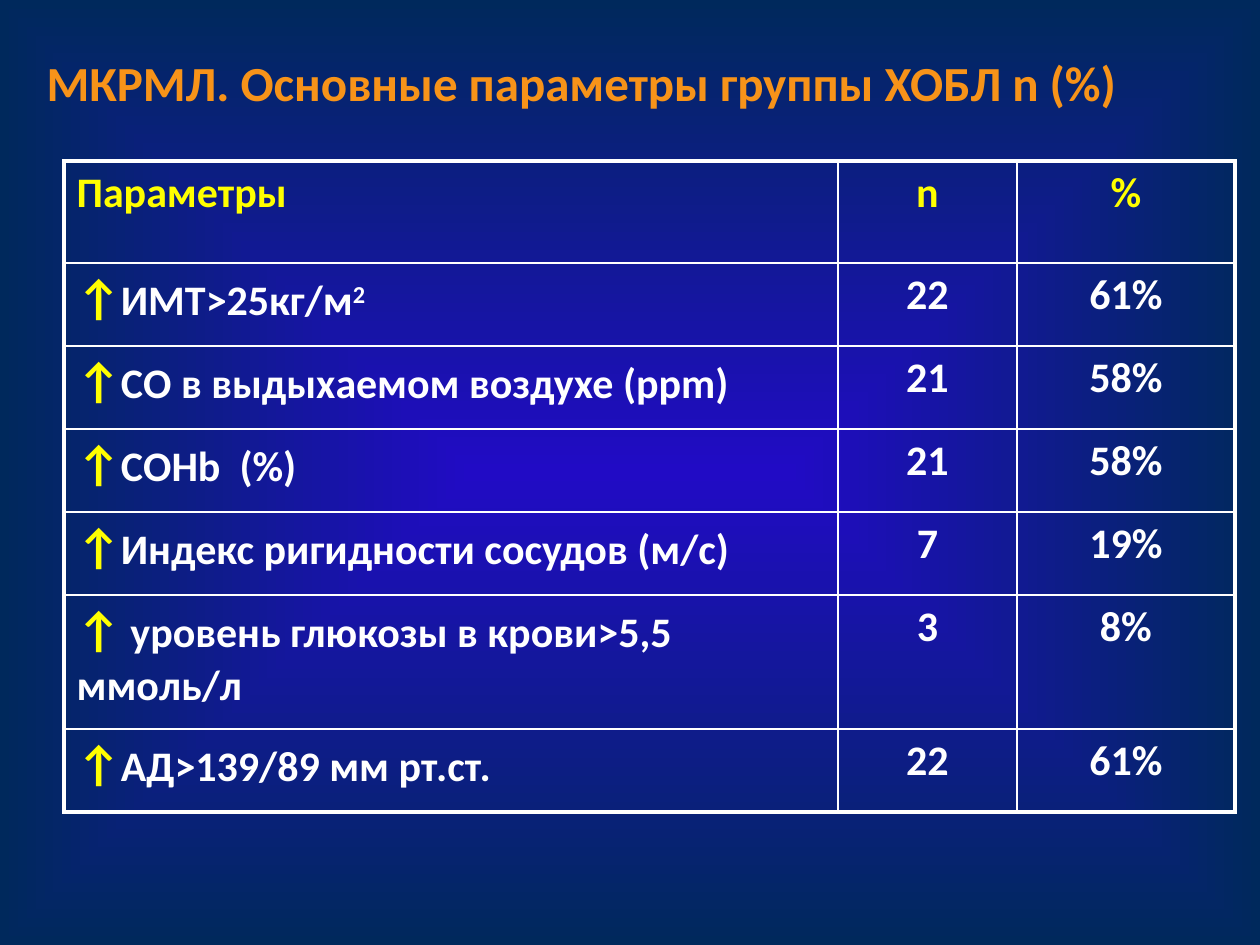
from lxml.etree import SubElement
from pptx import Presentation
from pptx.dml.color import RGBColor
from pptx.enum.text import MSO_ANCHOR, PP_ALIGN
from pptx.oxml import parse_xml
from pptx.oxml.ns import nsdecls, qn
from pptx.util import Pt

PX = 914400 // 126
ORANGE = RGBColor(0xF7, 0x93, 0x19)
YELLOW = RGBColor(0xFF, 0xFF, 0x00)
WHITE = RGBColor(0xFF, 0xFF, 0xFF)
BLUE = RGBColor(0x21, 0x0B, 0xC5)
NAVY = RGBColor(0x00, 0x29, 0x5C)
THIN, THICK = Pt(1), Pt(2.25)

HEADER = ("Параметры", "n", "%")
ROWS = [
    ("ИМТ>25кг/м", "22", "61%"),
    ("СО в выдыхаемом воздухе (ppm)", "21", "58%"),
    ("СОHb  (%)", "21", "58%"),
    ("Индекс ригидности сосудов (м/с)", "7", "19%"),
    (" уровень глюкозы в крови>5,5 ммоль/л", "3", "8%"),
    ("АД>139/89 мм рт.ст.", "22", "61%"),
]
COLUMN_WIDTHS = (774, 179, 218)
ROW_HEIGHTS = (102, 83, 83, 83, 83, 134, 83)


def add_run(paragraph, text, size, color):
    run = paragraph.add_run()
    run.text = text
    run.font.name = "Calibri"
    run.font.size = Pt(size)
    run.font.bold = True
    run.font.color.rgb = color
    return run


def set_borders(cell, widths):
    properties = cell._tc.get_or_add_tcPr()
    for position, (side, width) in enumerate(zip("LRTB", widths)):
        properties.insert(position, parse_xml(
            f'<a:ln{side} {nsdecls("a")} w="{width}"><a:solidFill>'
            f'<a:srgbClr val="{WHITE}"/></a:solidFill></a:ln{side}>'))


presentation = Presentation()
presentation.slide_width = 1260 * PX
presentation.slide_height = 945 * PX
slide = presentation.slides.add_slide(presentation.slide_layouts[5])

# Background: gradient from the centre outwards
background = slide.background.fill
background.gradient()
for stop, color in zip(background.gradient_stops, (BLUE, NAVY)):
    stop.color.rgb = color
gradient = slide.background._cSld.find(".//" + qn("a:gradFill"))
gradient.remove(gradient.find(qn("a:lin")))
gradient_path = SubElement(gradient, qn("a:path"), path="shape")
SubElement(gradient_path, qn("a:fillToRect"),
           dict.fromkeys("ltrb", "50000"))

# Title
title = slide.shapes.title
title.left, title.top, title.width, title.height = (
    34 * PX, 38 * PX, 1201 * PX, 87 * PX)
title.text_frame.vertical_anchor = MSO_ANCHOR.MIDDLE
paragraph = title.text_frame.paragraphs[0]
paragraph.alignment = PP_ALIGN.LEFT
add_run(paragraph, "МКРМЛ. Основные параметры группы ХОБЛ n (%)", 28, ORANGE)

# Table
frame = slide.shapes.add_table(
    len(ROW_HEIGHTS), len(COLUMN_WIDTHS), 64 * PX, 161 * PX,
    sum(COLUMN_WIDTHS) * PX, sum(ROW_HEIGHTS) * PX)
table = frame.table
table.first_row = table.horz_banding = False
for column, width in zip(table.columns, COLUMN_WIDTHS):
    column.width = width * PX
for row, height in zip(table.rows, ROW_HEIGHTS):
    row.height = height * PX

last_row, last_column = len(ROW_HEIGHTS) - 1, len(COLUMN_WIDTHS) - 1
for row_index, texts in enumerate([HEADER, *ROWS]):
    for column_index, text in enumerate(texts):
        cell = table.cell(row_index, column_index)
        cell.fill.background()
        outer = (column_index == 0, column_index == last_column,
                 row_index == 0, row_index == last_row)
        set_borders(cell, [THICK if edge else THIN for edge in outer])

        paragraph = cell.text_frame.paragraphs[0]
        paragraph.alignment = PP_ALIGN.CENTER if column_index else PP_ALIGN.LEFT
        if row_index and column_index == 0:
            add_run(paragraph, "↑", 28, YELLOW)
        add_run(paragraph, text, 24, WHITE if row_index else YELLOW)

# Superscript in the body mass index row
square = add_run(table.cell(1, 0).text_frame.paragraphs[0], "2", 24, WHITE)
square.font._element.set("baseline", "30000")

presentation.save("out.pptx")
